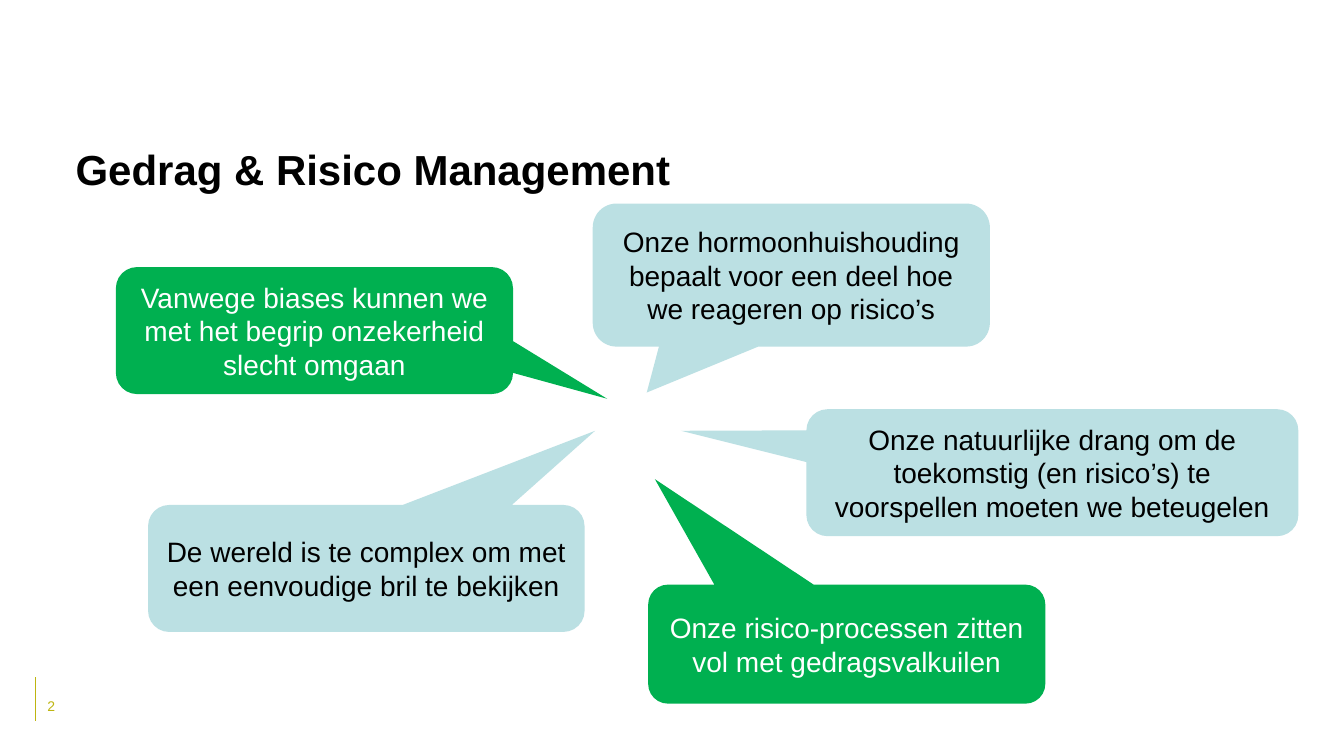
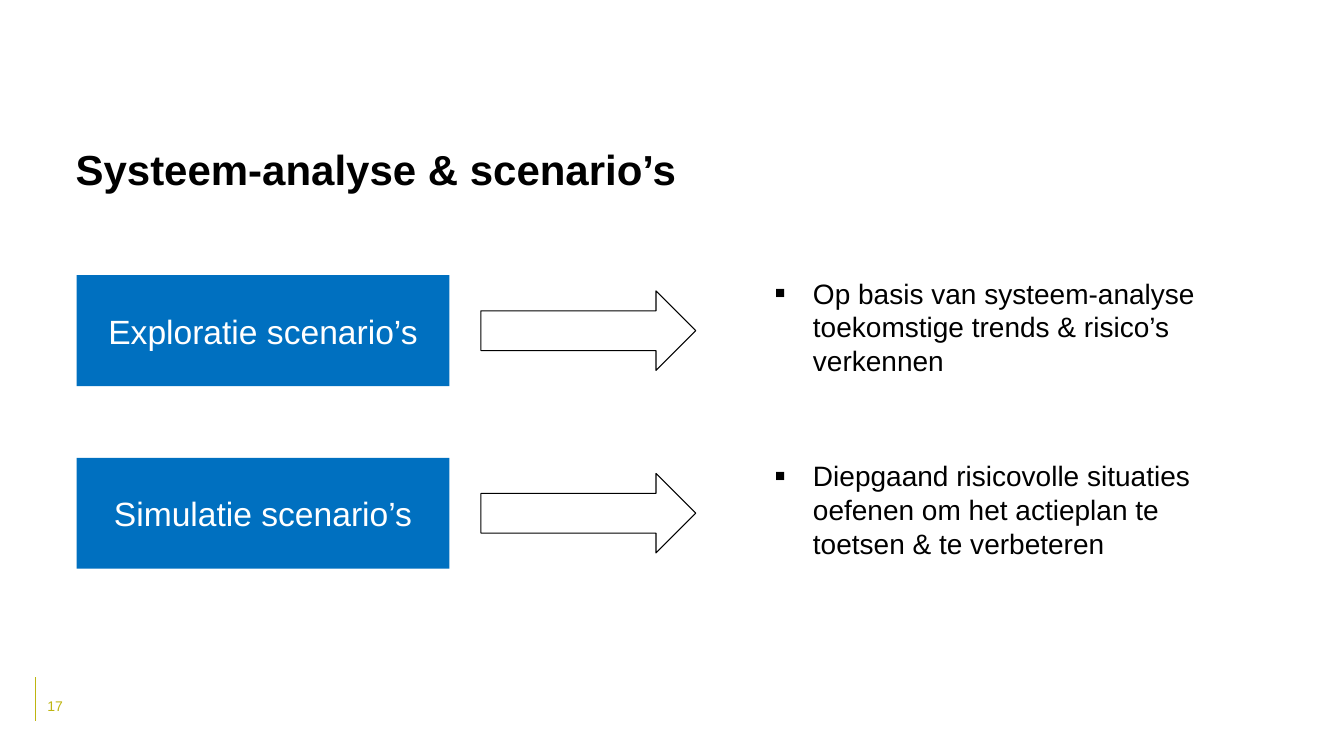
from dataclasses import dataclass

import pptx
import pptx.dml.color
import pptx.enum.shapes
import pptx.enum.text
import pptx.oxml.ns
import pptx.util
from lxml import etree

Pt = pptx.util.Pt
SHAPE = pptx.enum.shapes.MSO_SHAPE
ALIGN = pptx.enum.text.PP_ALIGN
ANCHOR = pptx.enum.text.MSO_ANCHOR
qn = pptx.oxml.ns.qn

# Shared look
FONT = "Arial"
BLACK, WHITE, OLIVE = "000000", "FFFFFF", "BEB511"
PALE, GREEN, BLUE = "BBE0E3", "00B050", "0070C0"
TITLE = {"size": Pt(30), "bold": True}
NUMBER = {"size": Pt(10)}
BODY = {"size": Pt(20)}
LABEL = {"size": Pt(24)}
BULLET_INDENT = 27


@dataclass
class Box:
    x: float
    y: float
    w: float
    h: float

    def points(self) -> list:
        return [Pt(v) for v in (self.x, self.y, self.w, self.h)]


@dataclass
class Callout:
    text: str
    box: Box
    tip: tuple[float, float]
    fill: str
    color: str


@dataclass
class Scenario:
    label: str
    detail: str


CALLOUTS = [
    Callout("Onze hormoonhuishouding bepaalt voor een deel hoe we reageren op risico’s",
            Box(423.4, 145.4, 283.7, 102.2), (-0.364, 0.821), PALE, BLACK),
    Callout("Vanwege biases kunnen we met het begrip onzekerheid slecht omgaan",
            Box(82.8, 190.8, 283.7, 90.7), (0.737, 0.537), GREEN, WHITE),
    Callout("Onze risico-processen zitten vol met gedragsvalkuilen",
            Box(463, 417.6, 283.7, 85), (-0.483, -1.386), GREEN, WHITE),
    Callout("De wereld is te complex om met een eenvoudige bril te bekijken",
            Box(105.8, 360.7, 311.8, 90.7), (0.524, -1.084), PALE, BLACK),
    Callout("Onze natuurlijke drang om de toekomstig (en risico’s) te voorspellen "
            "moeten we beteugelen",
            Box(576, 292.3, 351.4, 90.7), (-0.755, -0.33), PALE, BLACK),
]

SCENARIOS = [
    Scenario("Exploratie scenario’s",
             "Op basis van systeem-analyse toekomstige trends & risico’s verkennen"),
    Scenario("Simulatie scenario’s",
             "Diepgaand risicovolle situaties oefenen om het actieplan te toetsen "
             "& te verbeteren"),
]
ROW_TOP, ROW_PITCH = 236.2, 131  # middle of the first row, step to the next
ROW_PITCH = 130.4


def rgb(color: str) -> pptx.dml.color.RGBColor:
    return pptx.dml.color.RGBColor.from_string(color)


def write(tf, text: str, color: str, style: dict) -> None:
    tf.word_wrap = True
    r = tf.paragraphs[0].add_run()
    r.text = text
    r.font.color.rgb = rgb(color)
    for name, value in {"name": FONT, **style}.items():
        setattr(r.font, name, value)


def add_text(s, text: str, box: Box, color: str, style: dict, bullet: bool = False) -> None:
    tf = s.shapes.add_textbox(*box.points()).text_frame
    for side in ("left", "top", "right", "bottom"):
        setattr(tf, f"margin_{side}", 0)
    if bullet:
        pPr = tf.paragraphs[0]._p.get_or_add_pPr()
        pPr.set("marL", str(Pt(BULLET_INDENT)))
        pPr.set("indent", str(-Pt(BULLET_INDENT)))
        etree.SubElement(pPr, qn("a:buSzPct")).set("val", "60000")
        etree.SubElement(pPr, qn("a:buFont")).set("typeface", FONT)
        etree.SubElement(pPr, qn("a:buChar")).set("char", "■")
    write(tf, text, color, style)


def add_block(s, kind, box: Box, fill: str, text: str, color: str, style: dict):
    sp = s.shapes.add_shape(kind, *box.points())
    sp.shadow.inherit = False
    sp.fill.solid()
    sp.fill.fore_color.rgb = rgb(fill)
    sp.line.fill.background()
    sp.text_frame.vertical_anchor = ANCHOR.MIDDLE
    sp.text_frame.paragraphs[0].alignment = ALIGN.CENTER
    write(sp.text_frame, text, color, style)
    return sp


def add_arrow(s, box: Box) -> None:
    sp = s.shapes.add_shape(SHAPE.RIGHT_ARROW, *box.points())
    sp.shadow.inherit = False
    sp.fill.background()
    sp.line.color.rgb = rgb(BLACK)
    sp.line.width = Pt(0.75)


def add_slide(prs, title: str, number: int):
    s = prs.slides.add_slide(prs.slide_layouts[6])
    # Footer rule
    rule = s.shapes.add_connector(pptx.enum.shapes.MSO_CONNECTOR.STRAIGHT,
                                  Pt(25.2), Pt(483.8), Pt(25.2), Pt(514.8))
    rule.line.color.rgb = rgb(OLIVE)
    rule.line.width = Pt(0.75)
    etree.SubElement(rule._element.spPr, qn("a:effectLst"))
    # Title and slide number
    add_text(s, title, Box(54, 102.2, 776.2, 66.2), BLACK, TITLE)
    add_text(s, str(number), Box(33.8, 498.2, 51.1, 31), OLIVE, NUMBER)
    return s


def build_behaviour(prs) -> None:
    s = add_slide(prs, "Gedrag & Risico Management", 2)
    for c in CALLOUTS:
        sp = add_block(s, SHAPE.ROUNDED_RECTANGULAR_CALLOUT, c.box, c.fill,
                       c.text, c.color, BODY)
        sp.adjustments[0], sp.adjustments[1] = c.tip


def build_scenarios(prs) -> None:
    s = add_slide(prs, "Systeem-analyse & scenario’s", 17)
    for i, row in enumerate(SCENARIOS):
        middle = ROW_TOP + i * ROW_PITCH

        def centred(x: float, w: float, h: float) -> Box:
            return Box(x, middle - h / 2, w, h)

        add_block(s, SHAPE.RECTANGLE, centred(54.7, 266.4, 79.2), BLUE,
                  row.label, WHITE, LABEL)
        add_arrow(s, centred(343.6, 153.4, 56.8))
        add_text(s, row.detail, centred(553.7, 339.8, 77.8), BLACK, BODY, bullet=True)


def main() -> None:
    prs = pptx.Presentation()
    prs.slide_width, prs.slide_height = Pt(960), Pt(540)
    build_behaviour(prs)
    build_scenarios(prs)
    prs.save("out.pptx")


if __name__ == "__main__":
    main()
